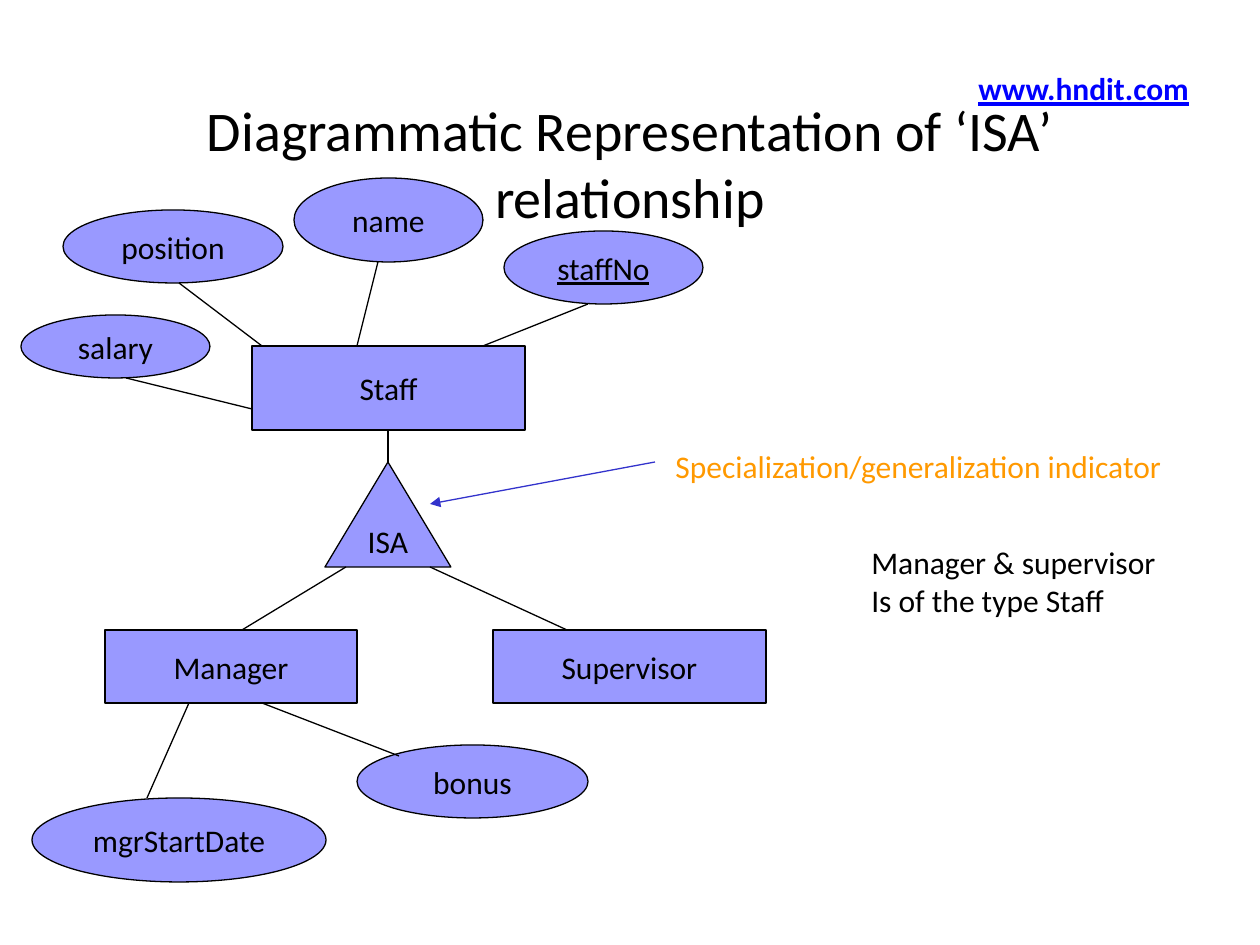
from lxml import etree
from pptx import Presentation
from pptx.dml.color import RGBColor
from pptx.enum.shapes import MSO_CONNECTOR, MSO_SHAPE
from pptx.enum.text import MSO_ANCHOR, MSO_AUTO_SIZE, PP_ALIGN
from pptx.oxml.ns import qn
from pptx.util import Pt

PX = 914400 // 126
RECT, OVAL = MSO_SHAPE.RECTANGLE, MSO_SHAPE.OVAL
TRIANGLE = MSO_SHAPE.ISOSCELES_TRIANGLE
STRAIGHT = MSO_CONNECTOR.STRAIGHT
MIDDLE = MSO_ANCHOR.MIDDLE
GROW = MSO_AUTO_SIZE.SHAPE_TO_FIT_TEXT
LEFT, CENTER = PP_ALIGN.LEFT, PP_ALIGN.CENTER
COLORS = {"text": "000000", "fill": "9999FF", "arrow": "3333CC",
          "note": "FF9900", "link": "0000FF"}


def set_text(sp, text, color="text", size=18, align=CENTER):
    tf = sp.text_frame
    tf.text = text
    for p in tf.paragraphs:
        p.alignment = align
        for r in p.runs:
            r.font.name = "Calibri"
            r.font.size = Pt(size)
            r.font.color.rgb = RGBColor.from_string(COLORS[color])
    return tf


def add_line(x1, y1, x2, y2, color="text"):
    line = s.shapes.add_connector(STRAIGHT, x1 * PX, y1 * PX, x2 * PX, y2 * PX)
    line.line.color.rgb = RGBColor.from_string(COLORS[color])
    line.line.width = Pt(0.75)
    etree.SubElement(line._element.spPr, qn("a:effectLst"))
    return line


prs = Presentation()
prs.slide_width, prs.slide_height = 1260 * PX, 945 * PX
s = prs.slides.add_slide(prs.slide_layouts[5])

# Title
title = s.shapes.title
title.left, title.top, title.width, title.height = 63 * PX, 84 * PX, 1134 * PX, 158 * PX
tf = set_text(title, "Diagrammatic Representation of ‘ISA’ relationship", size=32)
tf.vertical_anchor = MIDDLE
tf.word_wrap = True

# Entities, attributes and the ISA triangle
nodes = [
    (RECT, "Staff", 252, 346, 273, 84),
    (OVAL, "staffNo", 504, 231, 199, 73),
    (OVAL, "name", 294, 178, 189, 84),
    (OVAL, "position", 63, 210, 220, 73),
    (OVAL, "salary", 21, 315, 189, 63),
    (RECT, "Manager", 105, 630, 252, 73),
    (OVAL, "mgrStartDate", 32, 798, 294, 84),
    (OVAL, "bonus", 357, 745, 231, 73),
    (RECT, "Supervisor", 493, 630, 273, 73),
    (TRIANGLE, "ISA", 325, 462, 126, 105),
]
for kind, label, x, y, w, h in nodes:
    sp = s.shapes.add_shape(kind, x * PX, y * PX, w * PX, h * PX)
    sp.shadow.inherit = False
    sp.fill.solid()
    sp.fill.fore_color.rgb = RGBColor.from_string(COLORS["fill"])
    sp.line.color.rgb = RGBColor.from_string(COLORS["text"])
    sp.line.width = Pt(0.75)
    tf = set_text(sp, label)
    tf.vertical_anchor = MIDDLE
    tf.word_wrap = False
    if label == "staffNo":  # key attribute
        tf.paragraphs[0].runs[0].font.underline = True

# Links between the nodes
for ends in [
    (126, 378, 252, 409), (179, 283, 262, 346), (378, 262, 357, 346),
    (588, 304, 483, 346), (388, 430, 388, 462), (346, 567, 242, 630),
    (430, 567, 567, 630), (189, 703, 147, 798), (262, 703, 399, 756),
]:
    add_line(*ends)

# Arrow to the indicator
arrow = add_line(655, 462, 430, 504, "arrow")
etree.SubElement(arrow.line._get_or_add_ln(), qn("a:tailEnd"), type="triangle")

# Notes and web address
notes = [
    ("Specialization/generalization indicator", "note", 663, 441, 597, 50),
    ("Manager & supervisor\nIs of the type Staff", "text", 859, 537, 393, 97),
    ("www.hndit.com", "link", 966, 63, 237, 50),
]
for text, color, x, y, w, h in notes:
    box = s.shapes.add_textbox(x * PX, y * PX, w * PX, h * PX)
    tf = set_text(box, text, color, align=LEFT)
    tf.word_wrap = False
    tf.auto_size = GROW
    if color == "link":
        font = tf.paragraphs[0].runs[0].font
        font.bold = font.underline = True

prs.save("out.pptx")
